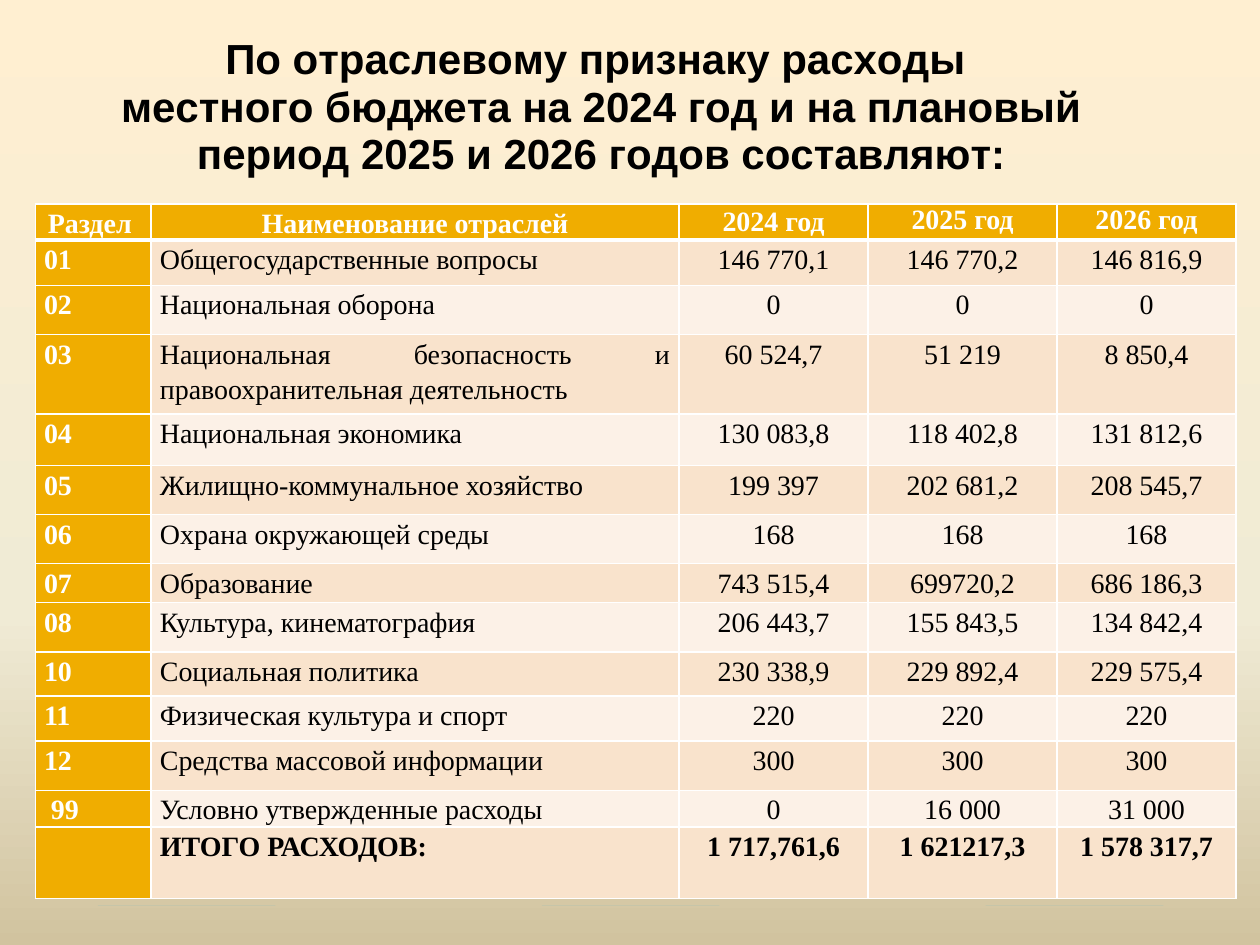
from copy import deepcopy

from lxml.etree import SubElement
from pptx import Presentation
from pptx.chart.data import CategoryChartData
from pptx.dml.color import RGBColor
from pptx.enum.chart import XL_CHART_TYPE
from pptx.enum.text import MSO_ANCHOR, PP_ALIGN
from pptx.oxml.ns import qn
from pptx.util import Inches, Pt

TITLE_LINES = [
    "По отраслевому признаку расходы ",
    "местного бюджета на 2024 год и на плановый период 2025 и 2026 годов составляют:",
]
HEADER = ["Раздел ", "Наименование отраслей", "2024 год", "2025 год", "2026 год"]
EXPENSES = [
    ("01", "Общегосударственные вопросы", "146 770,1", "146 770,2", "146 816,9"),
    ("02", "Национальная оборона", "0", "0", "0"),
    ("03", "Национальная безопасность и правоохранительная деятельность",
     "60 524,7", "51 219", "8 850,4"),
    ("04", "Национальная экономика ", "130 083,8", "118 402,8", "131 812,6"),
    ("05", "Жилищно-коммунальное хозяйство", "199 397", "202 681,2", "208 545,7"),
    ("06", "Охрана окружающей среды", "168", "168", "168"),
    ("07", "Образование", "743 515,4", "699720,2", "686 186,3"),
    ("08", "Культура, кинематография ", "206 443,7", "155 843,5", "134 842,4"),
    ("10", "Социальная политика", "230 338,9", "229 892,4", "229 575,4"),
    ("11", "Физическая культура и спорт", "220", "220", "220"),
    ("12", "Средства массовой информации", "300", "300", "300"),
    (" 99", "Условно утвержденные расходы", "0", "16 000", "31 000"),
    ("", "ИТОГО РАСХОДОВ:", "1 717,761,6", "1 621217,3", "1 578 317,7"),
]
COLUMN_WIDTHS = [0.92, 4.19, 1.5, 1.5, 1.42]
ROW_HEIGHTS = [0.28, 0.36, 0.39, 0.63, 0.41, 0.39, 0.39, 0.31, 0.39, 0.35, 0.36, 0.39, 0.29, 0.57]
BACKGROUND_STOPS = [(0, "FFEFD1"), (0.65, "F0EBD5"), (1, "D1C39F")]
ACCENT, BANDS = "F0AD00", ["FCF1E7", "F9E3CC"]
WHITE, BLACK = "FFFFFF", "000000"


def color(value):
    return RGBColor.from_string(value)


def style_font(font, name, size, value, bold):
    font.name, font.size, font.bold = name, Pt(size), bold
    font.color.rgb = color(value)


def paint_background(slide):
    fill = slide.background.fill
    fill.gradient()
    fill.gradient_angle = 270
    stop_list = slide.element.find(".//" + qn("a:gsLst"))
    stop_list.append(deepcopy(stop_list[-1]))
    for stop, (position, value) in zip(fill.gradient_stops, BACKGROUND_STOPS):
        stop.position = position
        stop.color.rgb = color(value)


def add_titled_chart(slide):
    data = CategoryChartData(number_format="0.0")
    data.categories = ["1", "2", "3"]
    data.add_series("Series 1", [0, 0, 0])
    chart = slide.shapes.add_chart(
        XL_CHART_TYPE.COLUMN_CLUSTERED,
        Inches(-0.5), Inches(0.17), Inches(11.01), Inches(7.16), data).chart
    style_font(chart.font, "Vollkorn", 10, BLACK, False)
    chart.has_legend = False
    for axis in (chart.category_axis, chart.value_axis):
        axis.visible = False
        axis.has_major_gridlines = False
    plot = chart.plots[0]
    plot.gap_width = 150
    plot.vary_by_categories = False
    series_fill = plot.series[0].format.fill
    series_fill.solid()
    series_fill.fore_color.rgb = color("60B5CC")
    frame = chart.chart_title.text_frame
    for index, line in enumerate(TITLE_LINES):
        paragraph = frame.add_paragraph() if index else frame.paragraphs[0]
        run = paragraph.add_run()
        run.text = line
        style_font(run.font, "Arial", 24, BLACK, True)
    layout = chart.element.find(".//" + qn("c:title")).find(qn("c:layout"))
    manual = SubElement(layout, qn("c:manualLayout"))
    for tag, value in [("xMode", "edge"), ("yMode", "edge"), ("x", "0.13"), ("y", "0.01")]:
        SubElement(manual, qn("c:" + tag)).set("val", value)


def add_borders(cell, top, bottom):
    properties = cell._tc.get_or_add_tcPr()
    for side, width in [("L", 1), ("R", 1), ("T", top), ("B", bottom)]:
        line = SubElement(properties, qn("a:ln" + side), w=str(Pt(width)))
        SubElement(SubElement(line, qn("a:solidFill")), qn("a:srgbClr"), val=WHITE)


def fill_cell(cell, text, row, column):
    is_header, is_total = row == 0, row == len(EXPENSES)
    is_accent = is_header or column == 0
    add_borders(cell, 3 if row == 1 else 1, 3 if is_header else 1)
    cell.fill.solid()
    cell.fill.fore_color.rgb = color(ACCENT if is_accent else BANDS[row % 2])
    if not text:
        return
    cell.margin_left = cell.margin_right = Inches(0.07)
    cell.margin_top = cell.margin_bottom = 0
    if is_header and column < 3:
        cell.vertical_anchor = MSO_ANCHOR.MIDDLE
    paragraph = cell.text_frame.paragraphs[0]
    paragraph.alignment = PP_ALIGN.CENTER if is_header or column > 1 else PP_ALIGN.JUSTIFY
    if not is_header or column < 2:
        paragraph.line_spacing = 1.15
    run = paragraph.add_run()
    run.text = text
    style_font(run.font, "Times New Roman", 16, WHITE if is_accent else BLACK, is_accent or is_total)


def add_expense_table(slide):
    rows = [HEADER, *EXPENSES]
    table = slide.shapes.add_table(
        len(rows), len(HEADER), Inches(0.28), Inches(1.62),
        Inches(sum(COLUMN_WIDTHS)), Inches(sum(ROW_HEIGHTS))).table
    for column, width in zip(table.columns, COLUMN_WIDTHS):
        column.width = Inches(width)
    for row, height in zip(table.rows, ROW_HEIGHTS):
        row.height = Inches(height)
    for row, texts in enumerate(rows):
        for column, text in enumerate(texts):
            fill_cell(table.cell(row, column), text, row, column)


def main():
    presentation = Presentation()
    presentation.slide_width, presentation.slide_height = Inches(10), Inches(7.5)
    slide = presentation.slides.add_slide(presentation.slide_layouts[6])
    paint_background(slide)
    add_titled_chart(slide)
    add_expense_table(slide)
    presentation.save("out.pptx")


if __name__ == "__main__":
    main()
